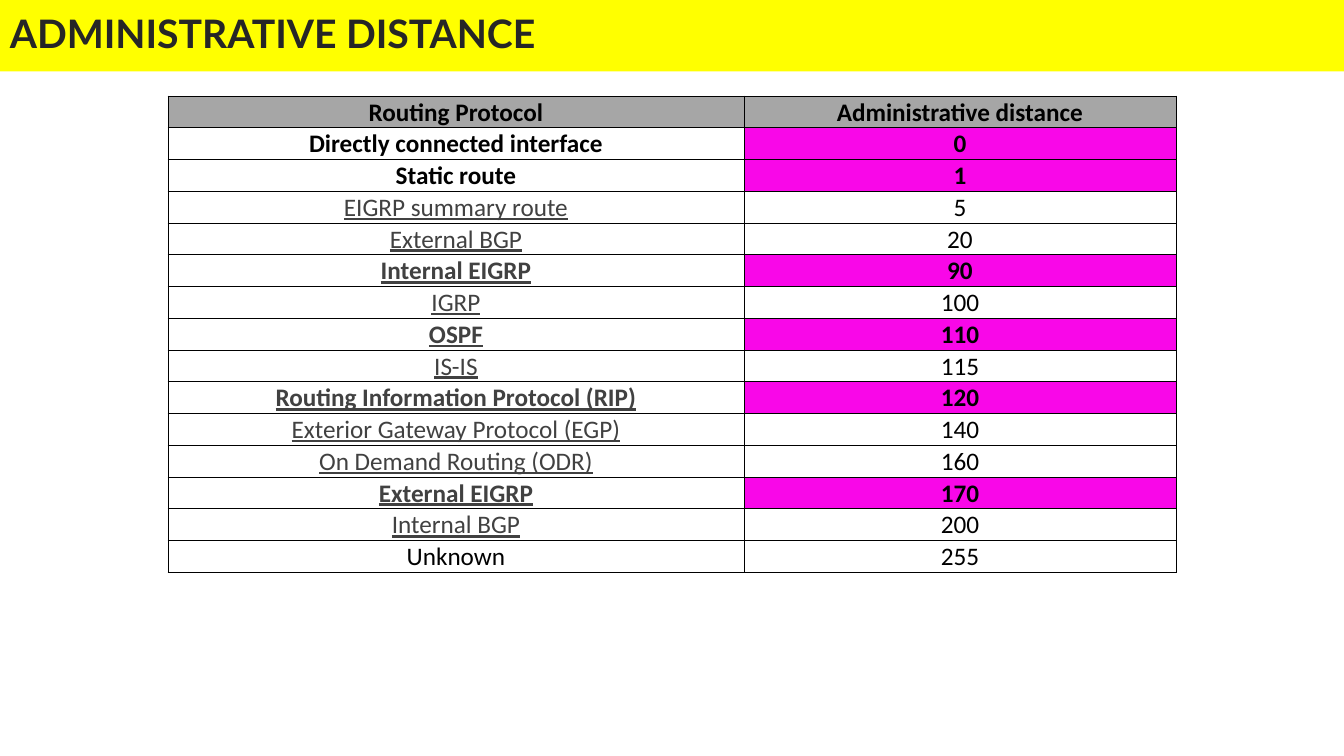
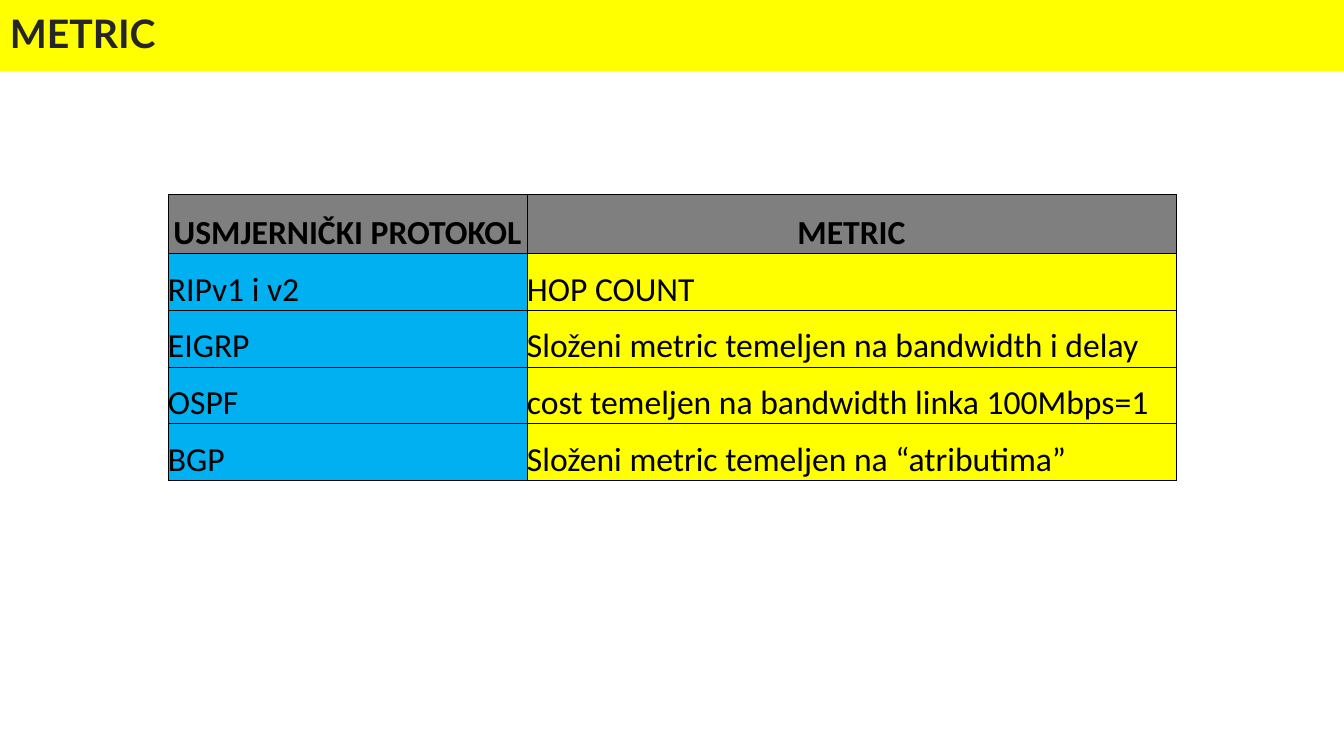
from lxml.etree import SubElement
from pptx import Presentation
from pptx.dml.color import RGBColor
from pptx.enum.shapes import MSO_SHAPE
from pptx.enum.text import MSO_ANCHOR, PP_ALIGN
from pptx.oxml.ns import qn
from pptx.util import Pt

BLACK = "000000"
TITLE_TEXT = "262626"
LINK = "414141"
YELLOW = "FFFF00"
MAGENTA = "F907E8"
BLUE = "00B0F0"
LIGHT_GRAY = "A6A6A6"
DARK_GRAY = "7F7F7F"

ADMINISTRATIVE_DISTANCES = [
    ("Directly connected interface", 0),
    ("Static route", 1),
    ("EIGRP summary route", 5),
    ("External BGP", 20),
    ("Internal EIGRP", 90),
    ("IGRP", 100),
    ("OSPF", 110),
    ("IS-IS", 115),
    ("Routing Information Protocol (RIP)", 120),
    ("Exterior Gateway Protocol (EGP)", 140),
    ("On Demand Routing (ODR)", 160),
    ("External EIGRP", 170),
    ("Internal BGP", 200),
    ("Unknown", 255),
]
KEY_DISTANCES = {0, 1, 90, 110, 120, 170}
UNLINKED_DISTANCES = {0, 1, 255}

METRICS = [
    ("RIPv1 i v2", "HOP COUNT"),
    ("EIGRP", "Složeni metric temeljen na bandwidth i delay"),
    ("OSPF", "cost temeljen na bandwidth linka 100Mbps=1"),
    ("BGP", "Složeni metric temeljen na “atributima”"),
]


def color(value):
    return RGBColor.from_string(value)


def paint(target, value):
    if value:
        target.fill.solid()
        target.fill.fore_color.rgb = color(value)
    else:
        target.fill.background()


def write(frame, text, size=18, font="Calibri", ink=BLACK, bold=False,
          underline=False, align=PP_ALIGN.LEFT, spacing=1.0):
    paragraph = frame.paragraphs[0]
    paragraph.alignment = align
    paragraph.line_spacing = spacing
    span = paragraph.add_run()
    span.text = text
    span.font.size = Pt(size)
    span.font.name = font
    span.font.color.rgb = color(ink)
    span.font.bold = bold
    span.font.underline = underline


def outline(cell, value=BLACK, width=0.5):
    properties = cell._tc.get_or_add_tcPr()
    for side in ("a:lnL", "a:lnR", "a:lnT", "a:lnB"):
        line = SubElement(properties, qn(side), w=str(Pt(width)))
        fill = SubElement(line, qn("a:solidFill"))
        SubElement(fill, qn("a:srgbClr"), val=value)


class Deck:
    width, height = 960, 540
    band_height = 51
    table_left = 120

    def __init__(self):
        self.file = Presentation()
        self.file.slide_width = Pt(self.width)
        self.file.slide_height = Pt(self.height)
        self.page = None

    def add_page(self, title):
        self.page = self.file.slides.add_slide(self.file.slide_layouts[6])
        band = self.page.shapes.add_shape(
            MSO_SHAPE.RECTANGLE, 0, 0, Pt(self.width), Pt(self.band_height))
        band.shadow.inherit = False
        paint(band, YELLOW)
        band.line.fill.background()
        band.text_frame.word_wrap = True
        band.text_frame.vertical_anchor = MSO_ANCHOR.MIDDLE
        write(band.text_frame, title, size=28, font="Lato", ink=TITLE_TEXT,
              bold=True, spacing=0.9)

    def add_table(self, top, widths, heights, rows, margin=0):
        table = self.page.shapes.add_table(
            len(rows), len(widths), Pt(self.table_left), Pt(top),
            Pt(sum(widths)), Pt(sum(heights))).table
        table.first_row = table.horz_banding = False
        for column, width in zip(table.columns, widths):
            column.width = Pt(width)
        for row, height, cells in zip(table.rows, heights, rows):
            row.height = Pt(height)
            for cell, content in zip(row.cells, cells):
                self.fill_cell(cell, margin, **content)

    def fill_cell(self, cell, margin, text, fill=None,
                  anchor=MSO_ANCHOR.BOTTOM, **style):
        cell.margin_left = cell.margin_right = cell.margin_top = Pt(margin)
        cell.margin_bottom = 0
        cell.vertical_anchor = anchor
        outline(cell)
        paint(cell, fill)
        write(cell.text_frame, text, **style)

    def save(self):
        self.file.save("out.pptx")


def add_distance_page(deck):
    deck.add_page("ADMINISTRATIVE DISTANCE")
    rows = [[dict(text=text, fill=LIGHT_GRAY, bold=True,
                  align=PP_ALIGN.CENTER, anchor=MSO_ANCHOR.MIDDLE)
             for text in ("Routing Protocol", "Administrative distance")]]
    for protocol, distance in ADMINISTRATIVE_DISTANCES:
        key = distance in KEY_DISTANCES
        linked = distance not in UNLINKED_DISTANCES
        shared = dict(bold=key, align=PP_ALIGN.CENTER)
        rows.append([
            dict(text=protocol, ink=LINK if linked else BLACK,
                 underline=linked, **shared),
            dict(text=str(distance), fill=MAGENTA if key else None, **shared),
        ])
    deck.add_table(68.6, [411.4, 308.6], [22.4] * len(rows), rows, margin=0.7)


def add_metric_page(deck):
    deck.add_page("METRIC")
    rows = [[dict(text=text, fill=DARK_GRAY, size=24, bold=True,
                  align=PP_ALIGN.CENTER)
             for text in ("USMJERNIČKI PROTOKOL", "METRIC")]]
    for protocol, metric in METRICS:
        rows.append([dict(text=protocol, fill=BLUE, size=24),
                     dict(text=metric, fill=YELLOW, size=24)])
    deck.add_table(139, [256.4, 463.6], [42.2] + [40.5] * len(METRICS), rows)


def main():
    deck = Deck()
    add_distance_page(deck)
    add_metric_page(deck)
    deck.save()


if __name__ == "__main__":
    main()
